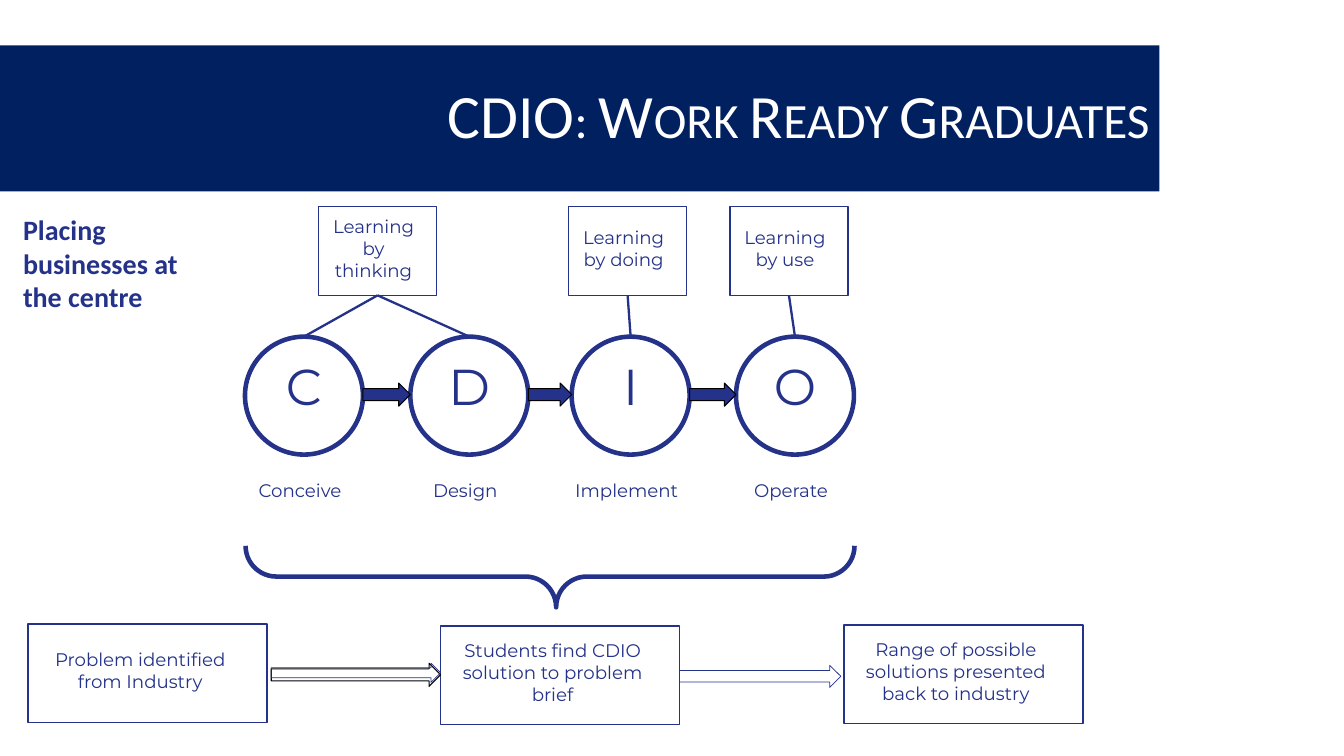
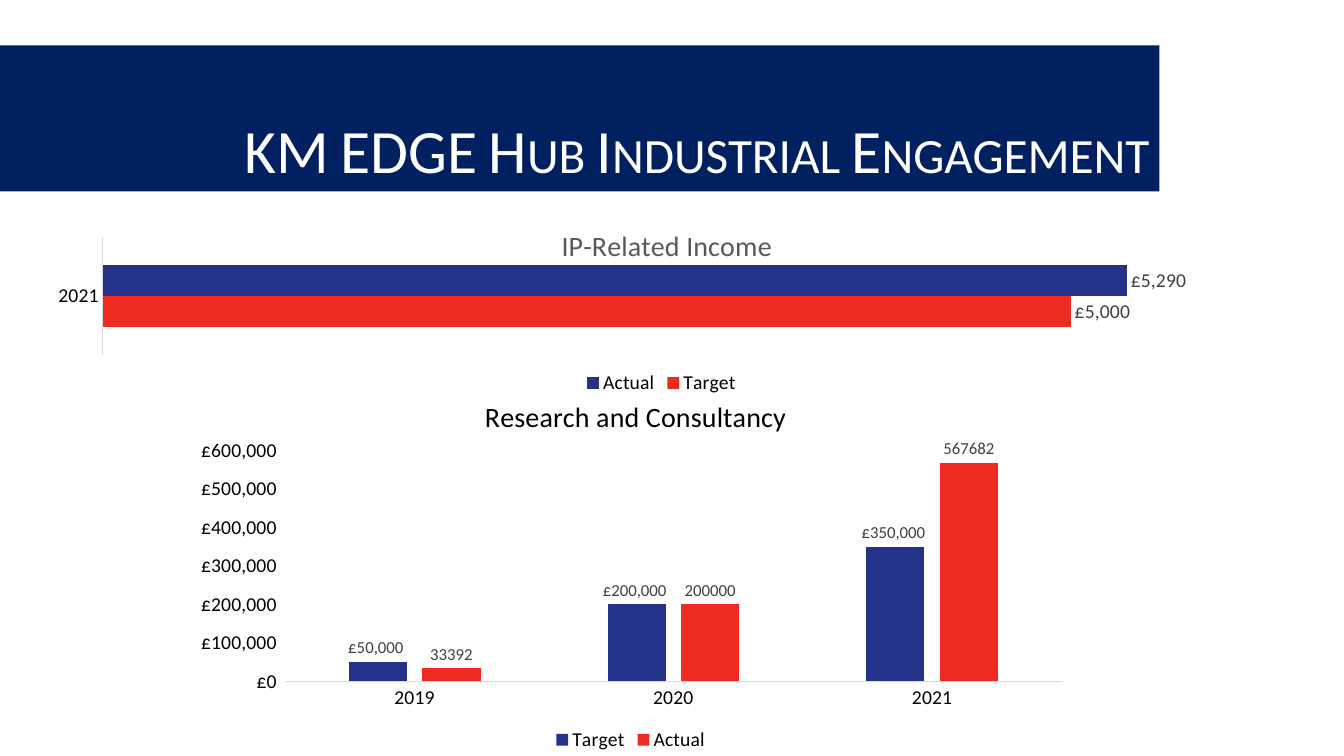
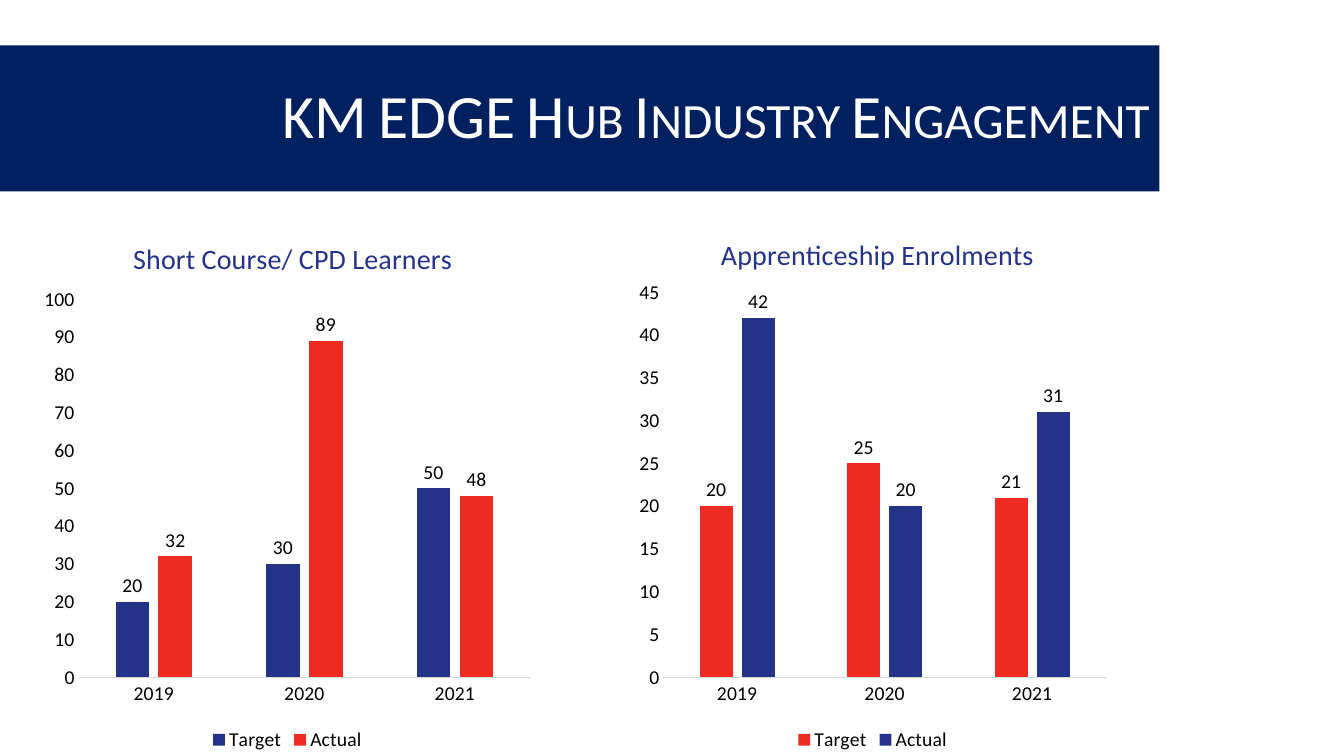
from pptx import Presentation
from pptx.chart.data import CategoryChartData
from pptx.dml.color import RGBColor
from pptx.enum.chart import XL_CHART_TYPE, XL_LABEL_POSITION, XL_LEGEND_POSITION, XL_TICK_MARK
from pptx.enum.shapes import MSO_CONNECTOR, MSO_SHAPE
from pptx.enum.text import MSO_ANCHOR, PP_ALIGN
from pptx.oxml import parse_xml
from pptx.oxml.ns import nsdecls, qn
from pptx.util import Inches, Pt

RECT, OVAL = MSO_SHAPE.RECTANGLE, MSO_SHAPE.OVAL
ARROW, BRACE = MSO_SHAPE.RIGHT_ARROW, MSO_SHAPE.RIGHT_BRACE
STRAIGHT = MSO_CONNECTOR.STRAIGHT
BAR, COLUMN = XL_CHART_TYPE.BAR_CLUSTERED, XL_CHART_TYPE.COLUMN_CLUSTERED
OUTSIDE, BELOW, NO_TICK = XL_LABEL_POSITION.OUTSIDE_END, XL_LEGEND_POSITION.BOTTOM, XL_TICK_MARK.NONE
LEFT, CENTER, RIGHT = PP_ALIGN.LEFT, PP_ALIGN.CENTER, PP_ALIGN.RIGHT
TOP, MIDDLE, BOTTOM = MSO_ANCHOR.TOP, MSO_ANCHOR.MIDDLE, MSO_ANCHOR.BOTTOM

COLORS = {"navy": "002060", "blue": "243289", "red": "EE2B21", "white": "FFFFFF",
          "black": "000000", "dark": "404040", "gray": "595959", "rule": "D9D9D9"}
BODY, LABEL = "Calibri", "Montserrat"
POUNDS = '"£"#,##0_);[Red]\\("£"#,##0\\)'
PLAIN = "General"
YEARS = ["2019", "2020", "2021"]

# Slide 1: each stage is letter, name, left edge
STAGES = [("C", "Conceive", 2.43), ("D", "Design", 4.07),
          ("I", "Implement", 5.67), ("O", "Operate", 7.3)]
RING, RING_TOP = 1.17, 3.34
# Lines of text, left edge, stages served
MODES = [(["Learning", "by", "thinking"], 3.16, [0, 1]),
         (["Learning", "by doing"], 5.64, [2]),
         (["Learning", "by use"], 7.24, [3])]
# Lines of text, left edge, top
STEPS = [(["Problem identified", "from Industry"], 0.28, 6.19),
         (["Students find CDIO", "solution to problem", "brief"], 4.37, 6.21),
         (["Range of possible", "solutions presented", "back to industry"], 8.37, 6.2)]
# Place, fill, line colour, line width
FLOWS = [((2.69, 6.58, 1.68, 0.23), "white", "black", 0.75),
         ((2.69, 6.58, 1.68, 0.19), None, "blue", 0.5),
         ((6.74, 6.6, 1.6, 0.22), None, "blue", 0.5)]

# Slides 2 and 3: series are name, values, colour, number format
INCOME = {
    "title": "IP-Related Income", "tint": "gray", "kind": BAR, "at": (0.33, 1.7, 12.46, 2.26),
    "head": (5.52, 2.19), "plot": (1.02, 2.35, 11.52, 1.17), "cats": ["2021"],
    "scale": (6000, 1000), "axis": POUNDS, "hide": True, "gap": 182, "overlap": 0,
    "label": (14, "dark"),
    "series": [("Target", [5000], "red", POUNDS), ("Actual", [5290], "blue", POUNDS)]}
RESEARCH = {
    "title": "Research and Consultancy", "tint": "black", "at": (1.81, 3.7, 8.89, 3.8),
    "head": (4.76, 3.89), "plot": (2.83, 4.47, 7.7, 2.29),
    "scale": (600000, 100000), "axis": POUNDS, "label": (12, "dark"),
    "series": [("Target", [50000, 200000, 350000], "blue", POUNDS),
               ("Actual", [33392, 200000, 567682], "red", PLAIN)]}
COURSES = {
    "title": "Short Course/ CPD Learners", "tint": "blue", "at": (0.34, 2.06, 5.02, 5.44),
    "head": (1.27, 2.32), "plot": (0.78, 2.97, 4.48, 3.75), "scale": (100, 10),
    "series": [("Target", [20, 30, 50], "blue", PLAIN), ("Actual", [32, 89, 48], "red", PLAIN)]}
TRAINEES = {
    "title": "Apprenticeship Enrolments", "tint": "blue", "at": (6.24, 2.06, 4.83, 5.44),
    "head": (7.1, 2.28), "plot": (6.58, 2.9, 4.39, 3.82), "scale": (45, 5),
    "series": [("Target", [20, 25, 21], "red", PLAIN), ("Actual", [42, 20, 31], "blue", PLAIN)]}
DEFAULTS = {"kind": COLUMN, "cats": YEARS, "axis": PLAIN, "hide": False,
            "gap": 219, "overlap": -27, "label": (14, "black")}


def rgb(name):
    return RGBColor.from_string(COLORS[name])


def style(font, size, color, face=BODY, bold=False):
    font.size, font.name, font.bold = Pt(size), face, bold
    font.color.rgb = rgb(color)


def shape(slide, kind, at, fill=None, line=None, width=0.75):
    item = slide.shapes.add_shape(kind, *map(Inches, at))
    item.shadow.inherit = False
    if fill:
        item.fill.solid()
        item.fill.fore_color.rgb = rgb(fill)
    else:
        item.fill.background()
    if line:
        item.line.color.rgb = rgb(line)
        item.line.width = Pt(width)
    else:
        item.line.fill.background()
    return item


def write(item, lines, size, color, face=LABEL, align=CENTER, anchor=MIDDLE,
          pad=(0, 0, 0, 0), wrap=False, bold=False):
    """Fill a shape with lines; pad is left, top, right, bottom."""
    frame = item.text_frame
    frame.word_wrap, frame.vertical_anchor = wrap, anchor
    (frame.margin_left, frame.margin_top,
     frame.margin_right, frame.margin_bottom) = map(Inches, pad)
    para = frame.paragraphs[0]
    para.alignment = align
    for num, line in enumerate(lines):
        if num:
            para.add_line_break()
        run = para.add_run()
        run.text = line
        style(run.font, size, color, face, bold)
    return para


def start(deck, title, anchor=MIDDLE):
    """Add a slide with its title band."""
    slide = deck.slides.add_slide(deck.slide_layouts[6])
    band = shape(slide, RECT, (0, 0.45, 11.5, 1.45), "navy")
    para = write(band, [title], 44, "white", BODY, RIGHT, anchor, (0.1, 0.05, 0.1, 0.05), True)
    para.line_spacing = 0.9
    para.runs[0].font._element.set("cap", "small")
    return slide


def arrow(slide, at, *look):
    item = shape(slide, ARROW, at, *look)
    item.adjustments[0], item.adjustments[1] = 0.52, 0.5


def link(slide, box, ring):
    line = slide.shapes.add_connector(STRAIGHT, 0, 0, 0, 0)
    line.begin_connect(box, 2)
    line.end_connect(ring, 0)
    line.line.color.rgb = rgb("blue")
    line.line.width = Pt(1.63)
    line._element.spPr.append(parse_xml(f"<a:effectLst {nsdecls('a')}/>"))


def pin(parent, index, at, frame):
    """Fix a chart part at a place given in slide inches."""
    left, top, width, height = frame
    parts = [("x", (at[0] - left) / width), ("y", (at[1] - top) / height)]
    if len(at) == 4:
        parts += [("w", at[2] / width), ("h", at[3] / height)]
    inner = '<c:layoutTarget val="inner"/>' if len(at) == 4 else ""
    modes = '<c:xMode val="edge"/><c:yMode val="edge"/>'
    sizes = "".join(f'<c:{key} val="{val:.4f}"/>' for key, val in parts)
    for old in parent.findall(qn("c:layout")):
        parent.remove(old)
    parent.insert(index, parse_xml(
        f"<c:layout {nsdecls('c')}><c:manualLayout>{inner}{modes}{sizes}"
        "</c:manualLayout></c:layout>"))


def graph(slide, spec):
    spec = {**DEFAULTS, **spec}
    data = CategoryChartData()
    data.categories = spec["cats"]
    for name, vals, _, fmt in spec["series"]:
        data.add_series(name, vals, fmt)
    chart = slide.shapes.add_chart(spec["kind"], *map(Inches, spec["at"]), data).chart
    style(chart.font, 10, "black")

    chart.has_title = True
    run = chart.chart_title.text_frame.paragraphs[0].add_run()
    run.text = spec["title"]
    style(run.font, 20, spec["tint"])
    pin(chart.element.xpath("c:chart/c:title")[0], 1, spec["head"], spec["at"])
    pin(chart.element.xpath("c:chart/c:plotArea")[0], 0, spec["plot"], spec["at"])

    chart.has_legend = True
    chart.legend.position = BELOW
    chart.legend.include_in_layout = False
    style(chart.legend.font, 14, "black")

    cat, val = chart.category_axis, chart.value_axis
    for axis in (cat, val):
        axis.has_major_gridlines = False
        axis.major_tick_mark = axis.minor_tick_mark = NO_TICK
        style(axis.tick_labels.font, 14, "black")
    cat.format.line.color.rgb = rgb("rule")
    cat.format.line.width = Pt(0.75)
    val.format.line.fill.background()
    val.minimum_scale = 0
    val.maximum_scale, val.major_unit = spec["scale"]
    val.tick_labels.number_format = spec["axis"]
    val.tick_labels.number_format_is_linked = False
    val.visible = not spec["hide"]

    plot = chart.plots[0]
    plot.gap_width, plot.overlap = spec["gap"], spec["overlap"]
    plot.vary_by_categories = False
    for series, (_, _, color, fmt) in zip(plot.series, spec["series"]):
        series.format.fill.solid()
        series.format.fill.fore_color.rgb = rgb(color)
        labels = series.data_labels
        labels.show_value = True
        labels.position = OUTSIDE
        labels.number_format = fmt
        labels.number_format_is_linked = False
        style(labels.font, *spec["label"])


def cycle(deck):
    slide = start(deck, "CDIO: Work Ready Graduates")
    rings = []
    for letter, name, left in STAGES:
        ring = shape(slide, OVAL, (left, RING_TOP, RING, RING), "white", "blue", 3.25)
        write(ring, [letter], 36, "blue", pad=(0, 0, 0, 0.2))
        rings.append(ring)
        label = slide.shapes.add_textbox(*map(Inches, (left - 0.04, 4.75, RING, 0.22)))
        write(label, [name], 13, "blue", anchor=TOP)
    for (_, _, left), (_, _, right) in zip(STAGES, STAGES[1:]):
        tail = left + RING
        arrow(slide, (tail, 3.8, right - tail, 0.23), "blue", "black")
    for lines, left, served in MODES:
        box = shape(slide, RECT, (left, 2.05, 1.17, 0.88), "white", "blue", 1.13)
        write(box, lines, 13, "blue", pad=(0, 0, 0.08, 0.06))
        for num in served:
            link(slide, box, rings[num])
    brace = shape(slide, BRACE, (5.15, 2.7, 0.61, 6.04), None, "blue", 3.25)
    brace.rotation = 90
    brace.adjustments[0], brace.adjustments[1] = 0.5, 0.49
    for lines, left, top in STEPS:
        box = shape(slide, RECT, (left, top, 2.37, 0.98), "white", "blue", 1.13)
        write(box, lines, 13, "blue", pad=(0, 0, 0.15, 0.06))
    for flow in FLOWS:
        arrow(slide, *flow)
    note = slide.shapes.add_textbox(*map(Inches, (0.13, 2.06, 2.08, 1.11)))
    write(note, ["Placing businesses at the centre"], 20, "blue", BODY, LEFT, TOP,
          (0.1, 0.05, 0.1, 0.05), True, True)


def main():
    deck = Presentation()
    deck.slide_width, deck.slide_height = Inches(13.33), Inches(7.5)
    cycle(deck)
    for title, anchor, specs in [
            ("KM EDGE Hub Industrial Engagement", BOTTOM, [INCOME, RESEARCH]),
            ("KM EDGE Hub Industry Engagement", MIDDLE, [COURSES, TRAINEES])]:
        slide = start(deck, title, anchor)
        for spec in specs:
            graph(slide, spec)
    deck.save("out.pptx")


if __name__ == "__main__":
    main()
